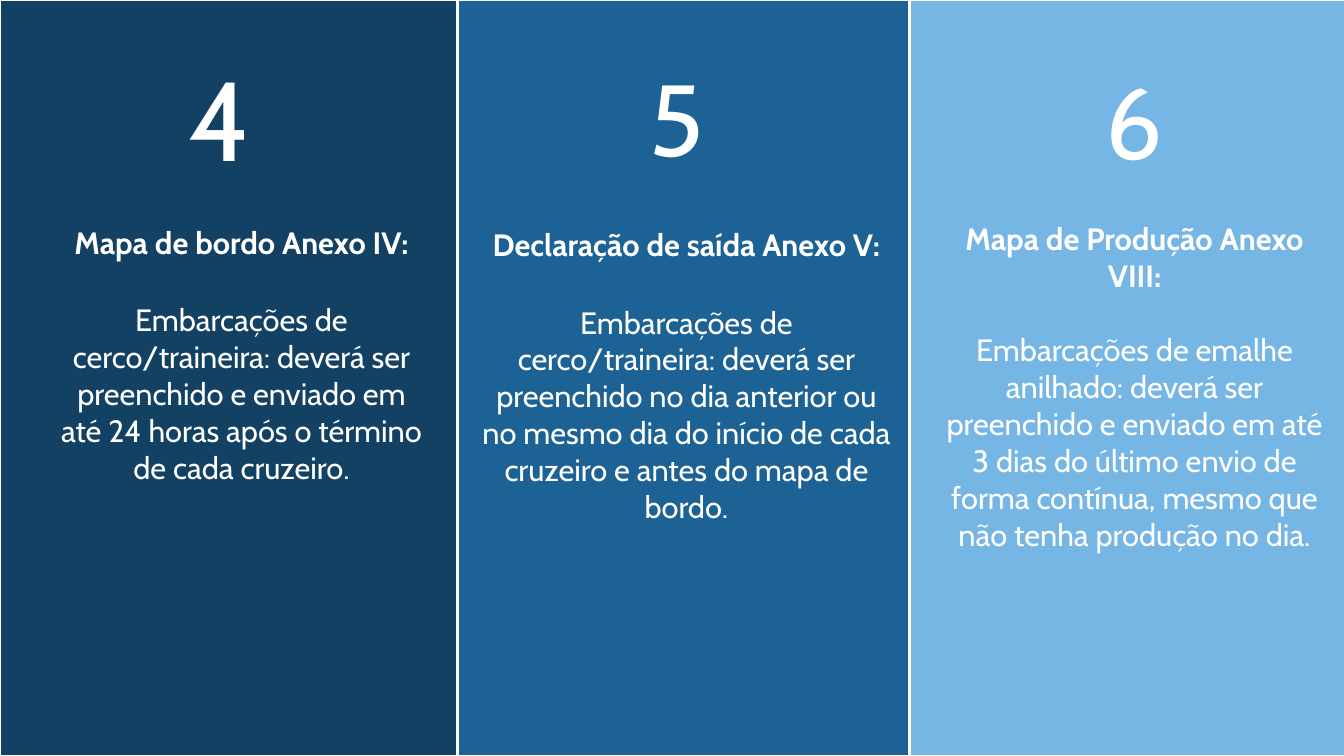
import pptx
import pptx.dml.color
import pptx.enum.shapes
import pptx.enum.text
import pptx.util

Pt = pptx.util.Pt
FONT = "Cabin"
WHITE = "FFFFFF"
SLIDE_SIZE = (960, 540)
BODY_SIZE = 22

STEPS = [
    {
        "panel": ("134163", 327),
        "number": ("4", 80, (127.4, 31.7, 70.6, 104.4)),
        "heading": "Mapa de bordo Anexo IV:",
        "rule": "Embarcações de cerco/traineira: deverá ser preenchido e enviado em "
                "até 24 horas após o término de cada cruzeiro.",
        "text_box": (34.6, 156.2, 275.8, 198.7),
        "gap": 29,
    },
    {
        "panel": ("1D6294", 322.5),
        "number": ("5", 72, (457.2, 36, 39.6, 94.3)),
        "heading": "Declaração de saída Anexo V:",
        "rule": "Embarcações de cerco/traineira: deverá ser preenchido no dia anterior ou "
                "no mesmo dia do início de cada cruzeiro e antes do mapa de bordo.",
        "text_box": (335.5, 157.7, 309.6, 223.2),
        "gap": 29,
    },
    {
        "panel": ("75B6E5", 322.5),
        "number": ("6", 72, (782.6, 38.2, 90.7, 94.3)),
        "heading": "Mapa de Produção Anexo VIII:",
        "rule": "Embarcações de emalhe anilhado: deverá ser preenchido e enviado em até "
                "3 dias do último envio de forma contínua, mesmo que não tenha produção no dia.",
        "text_box": (665.3, 153.4, 290.2, 220.3),
        "gap": 26.6,
    },
]


def colour(hex_code):
    return pptx.dml.color.RGBColor.from_string(hex_code)


def add_panel(slide, left, width, fill):
    panel = slide.shapes.add_shape(
        pptx.enum.shapes.MSO_SHAPE.RECTANGLE, Pt(left), Pt(0), Pt(width), Pt(SLIDE_SIZE[1]))
    panel.shadow.inherit = False
    panel.fill.solid()
    panel.fill.fore_color.rgb = colour(fill)
    panel.line.color.rgb = colour(WHITE)
    panel.line.width = Pt(2)


def add_text(slide, box, paragraphs, alignment):
    frame = slide.shapes.add_textbox(*map(Pt, box)).text_frame
    frame.word_wrap = True
    frame.auto_size = pptx.enum.text.MSO_AUTO_SIZE.SHAPE_TO_FIT_TEXT
    for index, (words, size, bold, space_before) in enumerate(paragraphs):
        paragraph = frame.add_paragraph() if index else frame.paragraphs[0]
        paragraph.alignment = alignment
        paragraph.space_before = Pt(space_before)
        run = paragraph.add_run()
        run.text = words
        run.font.name = FONT
        run.font.size = Pt(size)
        run.font.bold = bold
        run.font.color.rgb = colour(WHITE)


def main():
    deck = pptx.Presentation()
    deck.slide_width, deck.slide_height = map(Pt, SLIDE_SIZE)
    slide = deck.slides.add_slide(deck.slide_layouts[6])
    align = pptx.enum.text.PP_ALIGN

    left = 0
    for step in STEPS:
        fill, width = step["panel"]
        add_panel(slide, left, width, fill)
        left += width

    for step in STEPS:
        number, size, number_box = step["number"]
        add_text(slide, number_box, [(number, size, False, 0)], align.LEFT)
        add_text(slide, step["text_box"], [
            (step["heading"], BODY_SIZE, True, 0),
            (step["rule"], BODY_SIZE, False, step["gap"]),
        ], align.CENTER)

    deck.save("out.pptx")


if __name__ == "__main__":
    main()
